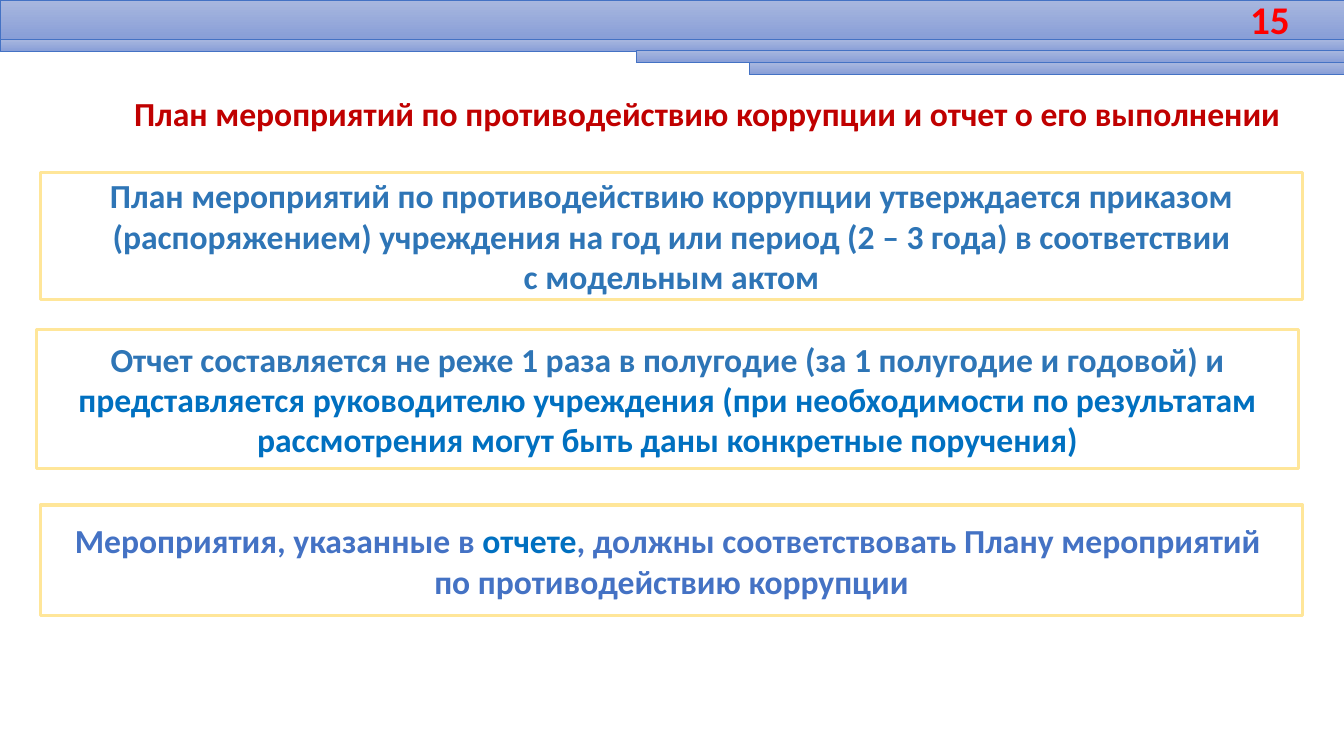
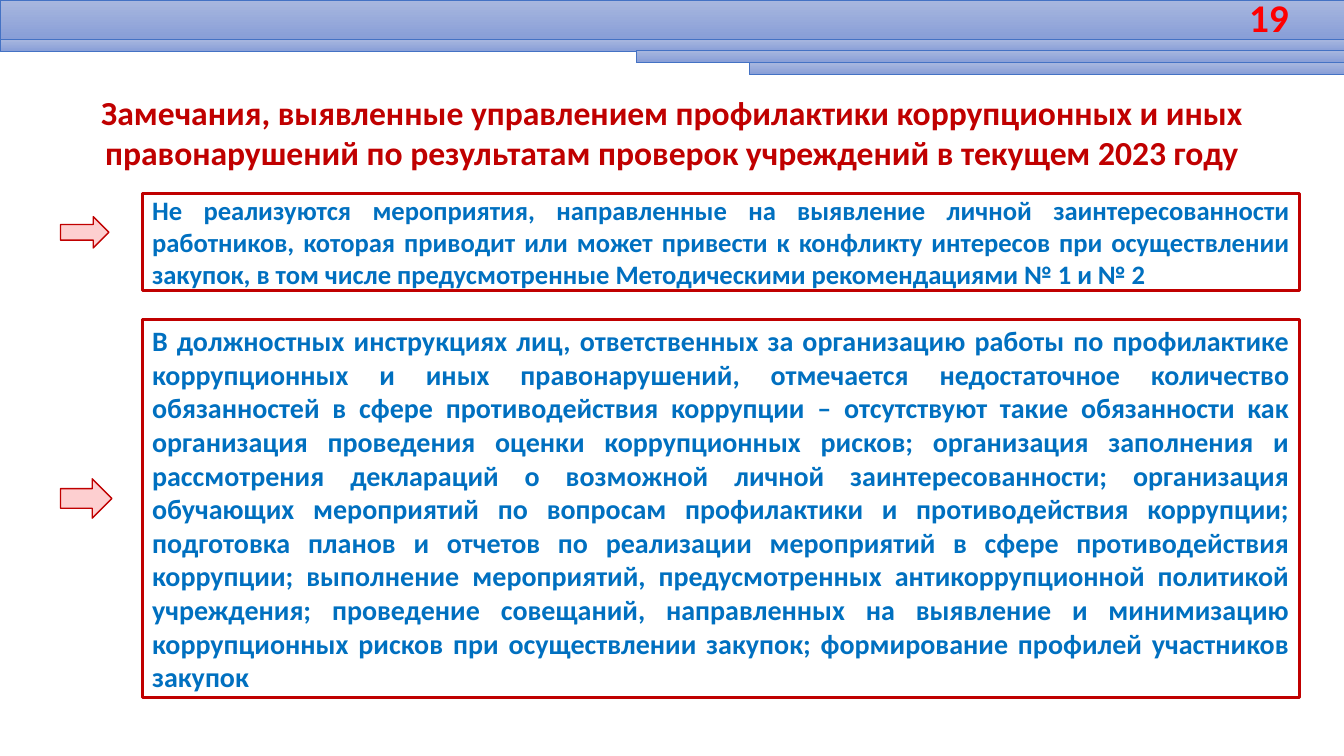
from pptx import Presentation as Deck
from pptx.dml.color import RGBColor as RGB
from pptx.enum.shapes import MSO_SHAPE as Kind
from pptx.enum.text import MSO_ANCHOR as Anchor, MSO_AUTO_SIZE as Fit, PP_ALIGN as Align
from pptx.util import Inches, Pt

PALE = RGB(0xA8, 0xB7, 0xDF)
DEEP = RGB(0x88, 0x9E, 0xD7)
EDGE = RGB(0x44, 0x72, 0xC4)
STEEL = RGB(0x2E, 0x75, 0xB6)
BLUE = RGB(0x00, 0x70, 0xC0)
CREAM = RGB(0xFF, 0xE6, 0x99)
RED = RGB(0xFF, 0x00, 0x00)
DARK = RGB(0xC0, 0x00, 0x00)
PINK = RGB(0xFD, 0xCF, 0xD0)

WIDE, HIGH = 13.33, 7.5
BANDS = [(0, 0, 0.39), (0, 0.39, 0.12), (6.31, 0.5, 0.12), (7.43, 0.62, 0.12)]


def place(*nums):
    return [Inches(num) for num in nums]


def assign(item, values):
    for name, value in values.items():
        setattr(item, name, value)


class Page:
    font = {"name": "Calibri", "bold": True}
    frame = {"word_wrap": True, "auto_size": Fit.NONE}

    def __init__(self, deck, mark, spot):
        self.slide = deck.slides.add_slide(deck.slide_layouts[5])
        self.shapes = self.slide.shapes
        for left, top, tall in BANDS:
            self.band(left, top, tall)
        self.number(mark, spot)

    def shape(self, kind, spot, edge, width):
        item = self.shapes.add_shape(kind, *place(*spot))
        item.shadow.inherit = False
        item.line.color.rgb = edge
        item.line.width = Pt(width)
        return item

    def band(self, left, top, tall):
        item = self.shape(Kind.RECTANGLE, (left, top, WIDE - left, tall), EDGE, 0.5)
        item.fill.gradient()
        item.fill.gradient_angle = 270
        for stop, tone in zip(item.fill.gradient_stops, (PALE, DEEP)):
            stop.color.rgb = tone

    def label(self, item, paras, size, align, anchor):
        text = item.text_frame
        assign(text, {**self.frame, "vertical_anchor": anchor})
        for num, runs in enumerate(paras):
            para = text.add_paragraph() if num else text.paragraphs[0]
            para.alignment = align
            for words, tone in runs:
                run = para.add_run()
                run.text = words
                assign(run.font, {**self.font, "size": Pt(size)})
                run.font.color.rgb = tone

    def number(self, mark, spot):
        item = self.shapes.add_textbox(*place(*spot))
        self.label(item, [[(mark, RED)]], 28, Align.RIGHT, Anchor.MIDDLE)

    def title(self, words, spot):
        item = self.shapes.title
        assign(item, dict(zip(("left", "top", "width", "height"), place(*spot))))
        self.label(item, [[(words, DARK)]], 24, Align.CENTER, Anchor.TOP)

    def box(self, paras, spot, edge, size=24, align=Align.CENTER, anchor=Anchor.MIDDLE):
        item = self.shape(Kind.RECTANGLE, spot, edge, 2.25)
        item.fill.background()
        pad = Inches(0.03)
        assign(item.text_frame, {"margin_top": pad, "margin_bottom": pad})
        self.label(item, paras, size, align, anchor)

    def arrow(self, spot):
        item = self.shape(Kind.RIGHT_ARROW, spot, DARK, 1)
        item.fill.solid()
        item.fill.fore_color.rgb = PINK


def plan(deck):
    page = Page(deck, "15", (12, 0, 0.89, 0.38))
    page.title("План мероприятий по противодействию коррупции и отчет о его выполнении",
               (0.95, 0.87, 12.13, 0.5))
    page.box([[("План мероприятий по противодействию коррупции утверждается приказом "
                "(распоряжением) учреждения на год или период (2 – 3 года) в соответствии", STEEL)],
              [("с модельным актом", STEEL)]],
             (0.4, 1.71, 12.52, 1.26), CREAM, anchor=Anchor.TOP)
    page.box([[("Отчет составляется не реже 1 раза в полугодие (за 1 полугодие и годовой) и", STEEL),
               (" представляется руководителю учреждения (при необходимости по результатам "
                "рассмотрения могут быть даны конкретные поручения)", BLUE)]],
             (0.36, 3.27, 12.52, 1.38), CREAM)
    page.box([[("Мероприятия, указанные в ", EDGE), ("отчете", BLUE),
               (", должны соответствовать Плану мероприятий ", EDGE)],
              [("по противодействию коррупции", EDGE)]],
             (0.4, 5.01, 12.52, 1.1), CREAM)


def faults(deck):
    page = Page(deck, "19", (11.63, -0.05, 1.25, 0.44))
    page.title("Замечания, выявленные управлением профилактики коррупционных и иных "
               "правонарушений по результатам проверок учреждений в текущем 2023 году",
               (0.6, 0.86, 12.13, 0.91))
    rows = [
        ("Не реализуются мероприятия, направленные на выявление личной заинтересованности "
         "работников, которая приводит или может привести к конфликту интересов при "
         "осуществлении закупок, в том числе предусмотренные Методическими рекомендациями "
         "№ 1 и № 2", 1.92, 0.96, 19, (0.6, 2.15, 0.48, 0.31)),
        ("В должностных инструкциях лиц, ответственных за организацию работы по профилактике "
         "коррупционных и иных правонарушений, отмечается недостаточное количество "
         "обязанностей в сфере противодействия коррупции – отсутствуют такие обязанности как "
         "организация проведения оценки коррупционных рисков; организация заполнения и "
         "рассмотрения деклараций о возможной личной заинтересованности; организация "
         "обучающих мероприятий по вопросам профилактики и противодействия коррупции; "
         "подготовка планов и отчетов по реализации мероприятий в сфере противодействия "
         "коррупции; выполнение мероприятий, предусмотренных антикоррупционной политикой "
         "учреждения; проведение совещаний, направленных на выявление и минимизацию "
         "коррупционных рисков при осуществлении закупок; формирование профилей участников "
         "закупок", 3.17, 3.75, 20, (0.6, 4.75, 0.51, 0.39)),
    ]
    for words, top, tall, size, spot in rows:
        page.box([[(words, BLUE)]], (1.41, top, 11.48, tall), DARK, size, Align.JUSTIFY)
        page.arrow(spot)


def main():
    deck = Deck()
    assign(deck, {"slide_width": Inches(WIDE), "slide_height": Inches(HIGH)})
    plan(deck)
    faults(deck)
    deck.save("out.pptx")


if __name__ == "__main__":
    main()
